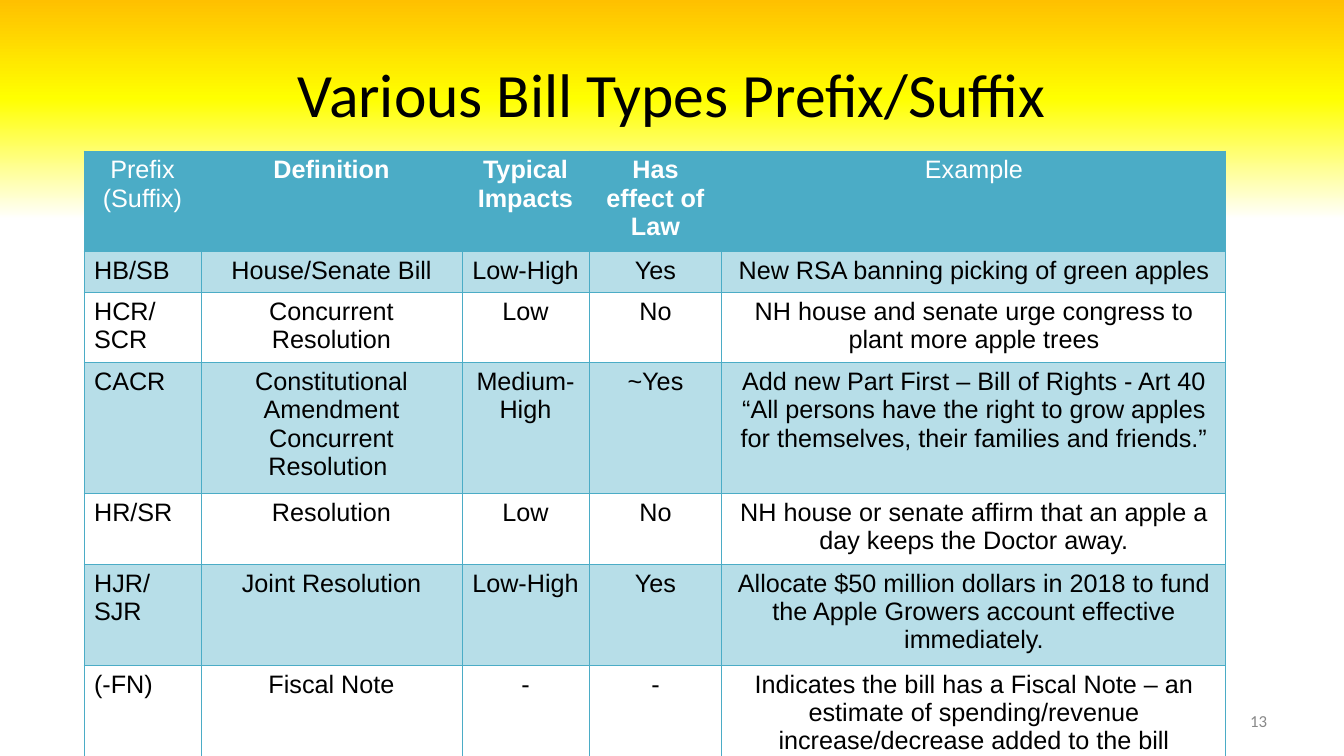
from lxml.etree import SubElement
from pptx import Presentation
from pptx.dml.color import RGBColor
from pptx.enum.text import MSO_ANCHOR as Anchor, PP_ALIGN as Align
from pptx.oxml.ns import qn
from pptx.util import Emu, Pt

PX = 9072  # 914400 EMU per inch / 100.8 px per inch
COLORS = {
    "teal": "4BACC6", "pale": "B7DEE8", "white": "FFFFFF",
    "black": "000000", "gray": "888888", "amber": "FFC000", "yellow": "FFFF00",
}
GRADIENT = [(0, "amber"), (13, "yellow"), (29, "white"), (100, "white")]
BORDER_WIDTH = Pt(0.75)


def write_text(frame, text, align, color, **font_format):
    """Put one formatted paragraph into a text frame."""
    frame.word_wrap = True
    paragraph = frame.paragraphs[0]
    paragraph.alignment = align
    run = paragraph.add_run()
    run.text = text
    run.font.color.rgb = RGBColor.from_string(COLORS[color])
    for name, value in font_format.items():
        setattr(run.font, name, value)


def add_color(parent, color):
    SubElement(parent, qn("a:srgbClr"), val=COLORS[color])


presentation = Presentation()
presentation.slide_width = Emu(1344 * PX)
presentation.slide_height = Emu(756 * PX)
slide = presentation.slides.add_slide(presentation.slide_layouts[6])

# Background running from top to bottom
background = slide.background.fill
background.gradient()
background.gradient_angle = 270
stops = slide.element.find(".//" + qn("a:gsLst"))
for stop in list(stops):
    stops.remove(stop)
for percent, color in GRADIENT:
    add_color(SubElement(stops, qn("a:gs"), pos=str(percent * 1000)), color)

# Title and page number
TEXT_BOXES = [
    ("Various Bill Types Prefix/Suffix", (67, 30, 1210, 126), Align.CENTER, "black", 44),
    ("13", (964, 701, 313, 40), Align.RIGHT, "gray", 12),
]
for text, box, align, color, size in TEXT_BOXES:
    shape = slide.shapes.add_textbox(*[Emu(length * PX) for length in box])
    shape.text_frame.vertical_anchor = Anchor.MIDDLE
    write_text(shape.text_frame, text, align, color, name="Calibri", size=Pt(size))

# Bill types table
COLUMN_WIDTHS = [117, 261, 127, 133, 504]
ROW_HEIGHTS = [95, 38, 66, 123, 67, 95, 94]
BOLD_HEADINGS = ("Definition", "Typical Impacts", "Has effect of Law")
BILL_TYPES = [
    ("Prefix (Suffix)", *BOLD_HEADINGS, "Example"),
    ("HB/SB", "House/Senate Bill", "Low-High", "Yes",
     "New RSA banning picking of green apples"),
    ("HCR/SCR", "Concurrent Resolution", "Low", "No",
     "NH house and senate urge congress to plant more apple trees"),
    ("CACR", "Constitutional Amendment Concurrent Resolution ", "Medium-High", "~Yes",
     "Add new Part First – Bill of Rights - Art 40 “All persons have the right "
     "to grow apples for themselves, their families and friends.”"),
    ("HR/SR", "Resolution", "Low", "No",
     "NH house or senate affirm that an apple a day keeps the Doctor away."),
    ("HJR/SJR", "Joint Resolution", "Low-High", "Yes",
     "Allocate $50 million dollars in 2018 to fund the Apple Growers account "
     "effective immediately."),
    ("(-FN)", "Fiscal Note", "-", "-",
     "Indicates the bill has a Fiscal Note – an estimate of spending/revenue "
     "increase/decrease added to the bill"),
]
table = slide.shapes.add_table(
    len(ROW_HEIGHTS), len(COLUMN_WIDTHS), Emu(84 * PX), Emu(151 * PX),
    Emu(sum(COLUMN_WIDTHS) * PX), Emu(sum(ROW_HEIGHTS) * PX)).table
table.first_row = True
table.horz_banding = False
for column, width in zip(table.columns, COLUMN_WIDTHS):
    column.width = Emu(width * PX)
for row, height in zip(table.rows, ROW_HEIGHTS):
    row.height = Emu(height * PX)

for row_index, texts in enumerate(BILL_TYPES):
    is_header = row_index == 0
    for column_index, text in enumerate(texts):
        cell = table.cell(row_index, column_index)
        properties = cell._tc.get_or_add_tcPr()
        for side in ("lnL", "lnR", "lnT", "lnB"):
            line = SubElement(properties, qn("a:" + side), w=str(BORDER_WIDTH))
            add_color(SubElement(line, qn("a:solidFill")), "teal")
        if is_header or row_index % 2:
            cell.fill.solid()
            fill_color = COLORS["teal" if is_header else "pale"]
            cell.fill.fore_color.rgb = RGBColor.from_string(fill_color)
        else:
            cell.fill.background()
        align = Align.CENTER if is_header or column_index else Align.LEFT
        write_text(cell.text_frame, text, align, "white" if is_header else "black",
                   name="Arial", size=Pt(18), bold=text in BOLD_HEADINGS)

presentation.save("out.pptx")
